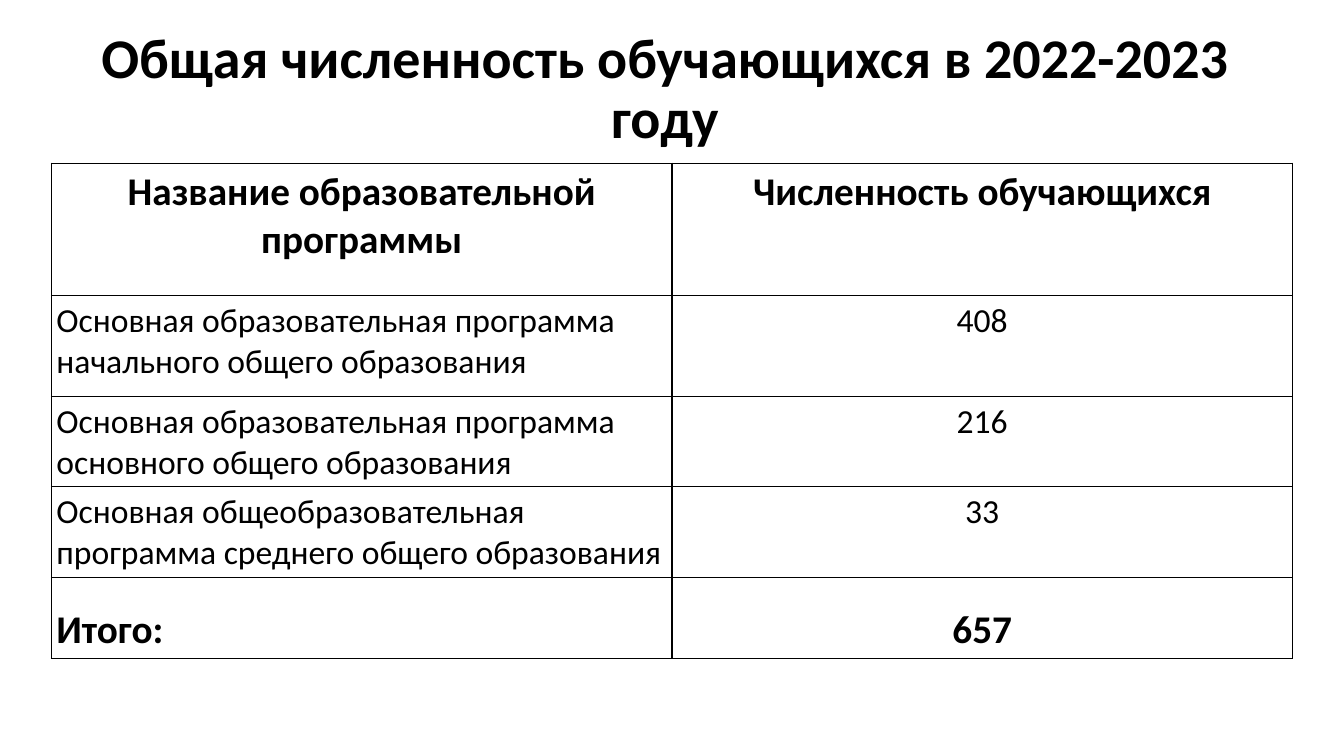
from lxml import etree
from pptx import Presentation, util as u
from pptx.dml import color
from pptx.enum import text
from pptx.oxml import ns

COLOURS = {"ink": "000000", "paper": "FFFFFF"}
FONT = "Calibri"
HEADING = {"size": u.Pt(28), "bold": True}
BODY = {"size": u.Pt(24), "bold": False}
ROWS = [
    ("Название образовательной программы", "Численность обучающихся", 1.31, HEADING, 1),
    ("Основная образовательная программа начального общего образования", "408", 1, BODY, 1),
    ("Основная образовательная программа основного общего образования", "216", 0.79, BODY, 1),
    ("Основная общеобразовательная программа среднего общего образования", "33", 0.79, BODY, 1),
    ("Итого:", "657", 0.46, HEADING, 1.5),
]


def set_attributes(target, values):
    """Set each named attribute of the target."""
    for name, value in values.items():
        setattr(target, name, value)


def write_text(frame, wording, font, paragraph):
    """Write one formatted paragraph into a text frame."""
    para = frame.paragraphs[0]
    set_attributes(para, paragraph)
    span = para.add_run()
    span.text = wording
    set_attributes(span.font, {"name": FONT, **font})
    span.font.color.rgb = color.RGBColor.from_string(COLOURS["ink"])


def style_cell(cell):
    """Give a cell thin borders, a plain fill and small margins."""
    properties = cell._tc.get_or_add_tcPr()
    for side in ("a:lnL", "a:lnR", "a:lnT", "a:lnB"):
        line = etree.SubElement(properties, ns.qn(side), w=str(u.Pt(1)))
        fill = etree.SubElement(line, ns.qn("a:solidFill"))
        etree.SubElement(fill, ns.qn("a:srgbClr"), val=COLOURS["ink"])
    cell.fill.solid()
    cell.fill.fore_color.rgb = color.RGBColor.from_string(COLOURS["paper"])
    margins = ("margin_left", "margin_right", "margin_top", "margin_bottom")
    set_attributes(cell, dict.fromkeys(margins, u.Inches(0.05)))


def add_title(page, left, top, width, height):
    """Add the centred slide title in the given box."""
    box = page.shapes.add_textbox(*map(u.Inches, (left, top, width, height)))
    set_attributes(box.text_frame, {"word_wrap": True, "vertical_anchor": text.MSO_ANCHOR.MIDDLE})
    write_text(box.text_frame, "Общая численность обучающихся в 2022-2023 году",
               {"size": u.Pt(40), "bold": True},
               {"alignment": text.PP_ALIGN.CENTER, "line_spacing": 0.9})


def add_enrolment_table(page, left, top, width, height):
    """Add the table of student numbers in the given box."""
    box = page.shapes.add_table(len(ROWS), 2, *map(u.Inches, (left, top, width, height)))
    table = box.table
    set_attributes(table, {"first_row": False, "horz_banding": False})
    for column in table.columns:
        column.width = u.Inches(width / 2)
    for index, (programme, count, row_height, font, spacing) in enumerate(ROWS):
        table.rows[index].height = u.Inches(row_height)
        for position, wording in enumerate((programme, count)):
            cell = table.cell(index, position)
            style_cell(cell)
            centred = index == 0 or position == 1
            align = text.PP_ALIGN.CENTER if centred else text.PP_ALIGN.LEFT
            write_text(cell.text_frame, wording, font,
                       {"alignment": align, "line_spacing": float(spacing)})


def main():
    """Build the slide and save the deck."""
    deck = Presentation()
    set_attributes(deck, {"slide_width": u.Inches(13.33), "slide_height": u.Inches(7.5)})
    page = deck.slides.add_slide(deck.slide_layouts[6])
    add_title(page, 0.36, 0.17, 12.47, 1.45)
    add_enrolment_table(page, 0.51, 1.62, 12.31, sum(row[2] for row in ROWS))
    deck.save("out.pptx")


if __name__ == "__main__":
    main()
